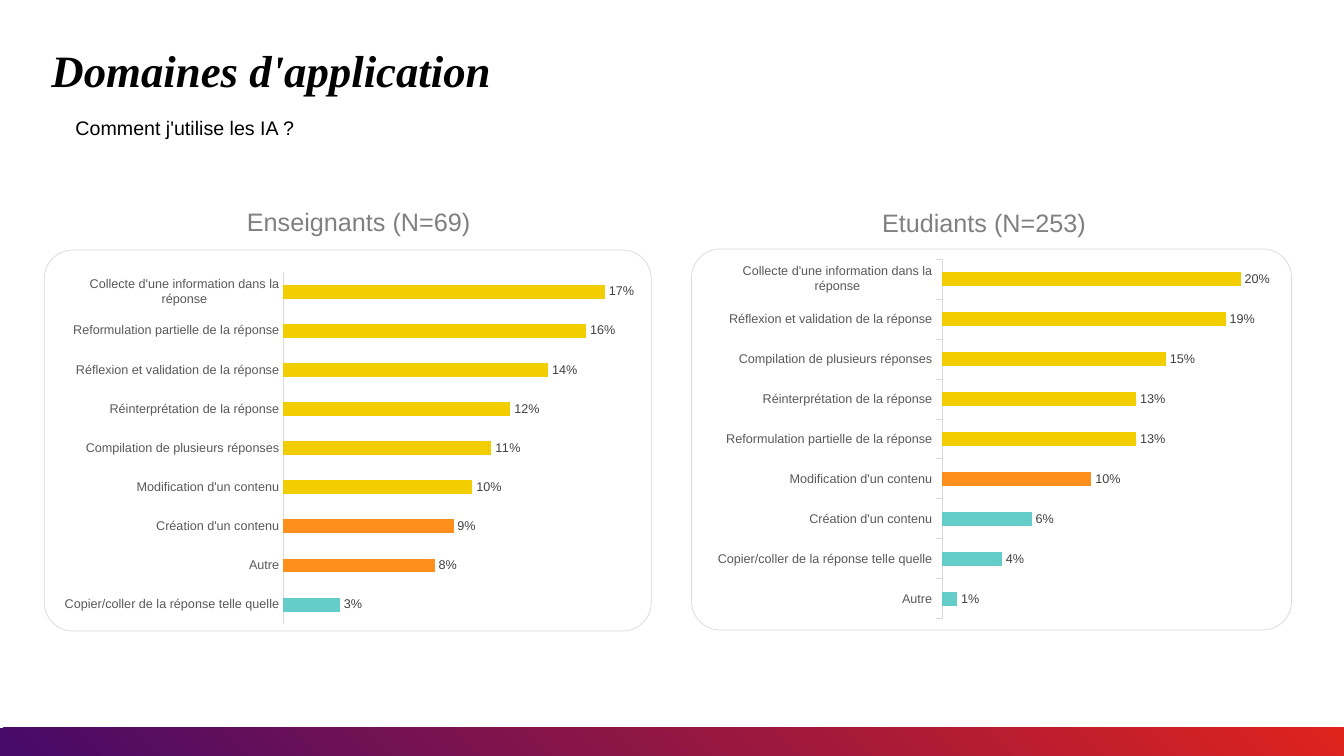
import pptx
import pptx.chart.data
import pptx.dml.color
import pptx.enum.chart
import pptx.enum.shapes
import pptx.enum.text
import pptx.oxml
import pptx.oxml.ns
import pptx.util


class Theme:
    red, purple = "DF231D", "470A68"
    teal, orange, yellow = "64CCC9", "FF8F1C", "F2CD00"
    black, heading, label, value, line = "000000", "808080", "595959", "404040", "D9D9D9"
    sans, serif = "Arial", "Times New Roman"
    title_size, heading_size, body_size, chart_size, label_size = 32, 18, 14, 10, 9


def rgb(code):
    return pptx.dml.color.RGBColor.from_string(code)


def apply(target, **values):
    for name, value in values.items():
        setattr(target, name, value)


def style_font(font, size, color, name=Theme.sans, **values):
    apply(font, size=pptx.util.Pt(size), name=name, **values)
    font.color.rgb = rgb(color)


class SlideBuilder:
    """Places elements by percent of the slide: left, top, width, height."""

    def __init__(self, presentation, theme):
        self.theme = theme
        self.width = presentation.slide_width
        self.height = presentation.slide_height
        self.slide = presentation.slides.add_slide(presentation.slide_layouts[6])

    def box(self, left, top, width, height):
        return [round(share * side / 100) for share, side in
                zip((left, top, width, height), (self.width, self.height) * 2)]

    def text(self, place, words, size, color, wrap=True, margin=None, spacing=None, **font):
        frame = self.slide.shapes.add_textbox(*self.box(*place)).text_frame
        frame.word_wrap = wrap
        if margin is not None:
            apply(frame, margin_left=margin, margin_top=margin,
                  margin_right=margin, margin_bottom=margin)
        paragraph = frame.paragraphs[0]
        paragraph.line_spacing = spacing
        run = paragraph.add_run()
        run.text = words
        style_font(run.font, size, color, **font)

    def band(self, place):
        shape = self.slide.shapes.add_shape(
            pptx.enum.shapes.MSO_SHAPE.RECTANGLE, *self.box(*place))
        shape.shadow.inherit = False
        shape.line.fill.background()
        shape.fill.gradient()
        colors = (self.theme.red, self.theme.purple)
        for stop, position, color in zip(shape.fill.gradient_stops, (0, 0.99), colors):
            stop.position = position
            stop.color.rgb = rgb(color)
        # Radial gradient centred on the top right corner
        linear = shape.element.find(".//" + pptx.oxml.ns.qn("a:lin"))
        linear.getparent().replace(linear, pptx.oxml.parse_xml(
            f'<a:path {pptx.oxml.ns.nsdecls("a")} path="circle">'
            '<a:fillToRect l="100000" b="100000"/></a:path>'))

    def frame(self, place):
        shape = self.slide.shapes.add_shape(
            pptx.enum.shapes.MSO_SHAPE.ROUNDED_RECTANGLE, *self.box(*place))
        shape.shadow.inherit = False
        shape.adjustments[0] = 0.075
        shape.fill.background()
        shape.line.color.rgb = rgb(self.theme.line)
        shape.line.width = pptx.util.Pt(0.5)

    def bars(self, place, rows, counts, maximum, tick, plot):
        theme = self.theme
        data = pptx.chart.data.CategoryChartData(number_format="0%")
        data.categories = [name for name, _ in rows]
        data.add_series("Series 1", [percent / 100 for _, percent in rows])
        chart = self.slide.shapes.add_chart(
            pptx.enum.chart.XL_CHART_TYPE.BAR_CLUSTERED, *self.box(*place), data).chart
        apply(chart, has_title=False, has_legend=False)
        style_font(chart.font, theme.chart_size, theme.black)

        # Axes
        ticks = pptx.enum.chart.XL_TICK_MARK
        axis = chart.category_axis
        apply(axis, major_tick_mark=tick, minor_tick_mark=ticks.NONE,
              has_major_gridlines=False)
        style_font(axis.tick_labels.font, theme.label_size, theme.label)
        axis.format.line.color.rgb = rgb(theme.line)
        axis.format.line.width = pptx.util.Pt(0.75)
        apply(chart.value_axis, visible=False, has_major_gridlines=False,
              minimum_scale=0, maximum_scale=maximum)

        # Bars, coloured in groups from the lowest up
        bar_plot = chart.plots[0]
        apply(bar_plot, gap_width=182, vary_by_categories=False, has_data_labels=True)
        palette = (theme.teal, theme.orange, theme.yellow)
        colors = [color for color, count in zip(palette, counts) for _ in range(count)]
        for index, color in enumerate(colors):
            fill = bar_plot.series[0].points[index].format.fill
            fill.solid()
            fill.fore_color.rgb = rgb(color)
        labels = bar_plot.data_labels
        apply(labels, show_value=True, number_format="0%", number_format_is_linked=False,
              position=pptx.enum.chart.XL_LABEL_POSITION.OUTSIDE_END)
        style_font(labels.font, theme.label_size, theme.value)

        # Inner plot area, as shares of the chart
        area = chart.element.find(".//" + pptx.oxml.ns.qn("c:plotArea"))
        for old in area.findall(pptx.oxml.ns.qn("c:layout")):
            area.remove(old)
        sides = "".join(f'<c:{key} val="{share}"/>' for key, share in zip("xywh", plot))
        area.insert(0, pptx.oxml.parse_xml(
            f'<c:layout {pptx.oxml.ns.nsdecls("c")}><c:manualLayout>'
            '<c:layoutTarget val="inner"/><c:xMode val="edge"/><c:yMode val="edge"/>'
            f'{sides}</c:manualLayout></c:layout>'))


COLLECT = "Collecte d'une information dans la réponse"
REFLECT = "Réflexion et validation de la réponse"
COMPILE = "Compilation de plusieurs réponses"
REINTERPRET = "Réinterprétation de la réponse"
REPHRASE = "Reformulation partielle de la réponse"
MODIFY = "Modification d'un contenu"
CREATE = "Création d'un contenu"
PASTE = "Copier/coller de la réponse telle quelle"
OTHER = "Autre"

TEACHERS = [(PASTE, 3), (OTHER, 8), (CREATE, 9), (MODIFY, 10), (COMPILE, 11),
            (REINTERPRET, 12), (REFLECT, 14), (REPHRASE, 16), (COLLECT, 17)]
STUDENTS = [(OTHER, 1), (PASTE, 4), (CREATE, 6), (MODIFY, 10), (REPHRASE, 13),
            (REINTERPRET, 13), (COMPILE, 15), (REFLECT, 19), (COLLECT, 20)]


def main():
    presentation = pptx.Presentation()
    apply(presentation, slide_width=pptx.util.Inches(13.33),
          slide_height=pptx.util.Inches(7.5))
    theme = Theme()
    builder = SlideBuilder(presentation, theme)

    # Footer band and titles
    builder.band((0, 96.27, 100, 3.73))
    builder.text((3.83, 6.4, 92.35, 13.47), "Domaines d'application", theme.title_size,
                 theme.black, margin=0, spacing=0.9, name=theme.serif,
                 bold=True, italic=True)
    builder.text((4.88, 14.67, 18.3, 4.53), "Comment j'utilise les IA ?",
                 theme.body_size, theme.black, wrap=False)

    # One panel per group: heading, frame, chart
    ticks = pptx.enum.chart.XL_TICK_MARK
    panels = [
        ("Enseignants (N=69)", (17.63, 26.67, 19.58, 5.33), (3.3, 33.07, 45.16, 50.4),
         ((3.98, 34.93, 43.36, 48.53), TEACHERS, (1, 2, 6), 0.18, ticks.NONE,
          (0.394, 0.022, 0.585, 0.96))),
        ("Etudiants (N=253)", (64.89, 26.8, 19.58, 5.33), (51.46, 32.93, 44.64, 50.4),
         ((52.51, 33.33, 46.29, 49.6), STUDENTS, (3, 1, 5), 0.25, ticks.OUTSIDE,
          (0.38, 0.019, 0.6, 0.96))),
    ]
    for heading, heading_place, frame_place, chart in panels:
        builder.frame(frame_place)
        builder.text(heading_place, heading, theme.heading_size, theme.heading)
        builder.bars(*chart)

    presentation.save("out.pptx")


if __name__ == "__main__":
    main()
